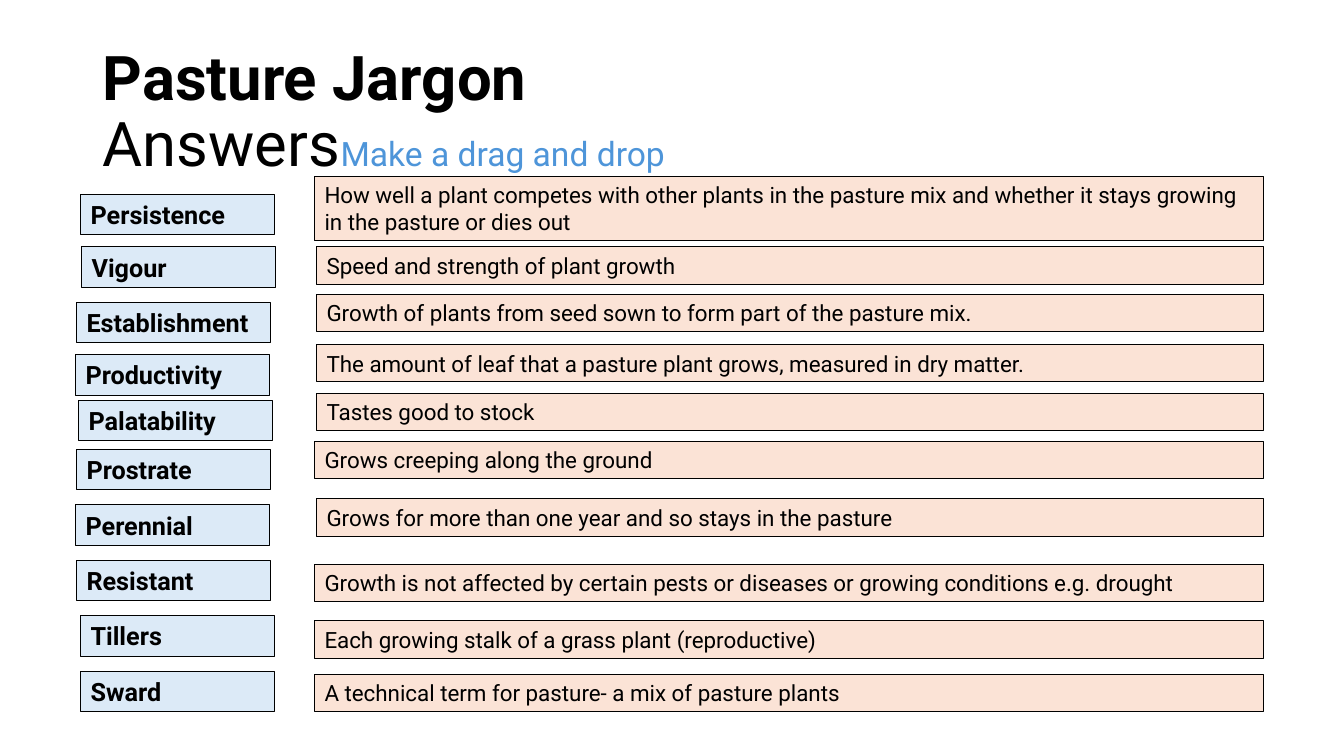
"""Build the pasture jargon answer slide, with terms beside their meanings."""
from pptx import Presentation, util as u
from pptx.dml import color
from pptx.enum import shapes, text

FONT = "Roboto"
BLACK, BLUE, PEACH = "000000", "DCEAF7", "FBE3D6"
RIGHT = 12.53

TITLE = [
    [("Pasture Jargon", 44, True, BLACK)],
    [("Answers", 44, False, BLACK), ("Make a drag and drop", 24, False, "4E95D9")],
]

TERMS = [
    ("Persistence", 0.8, 1.93),
    ("Vigour", 0.81, 2.45),
    ("Establishment", 0.76, 3),
    ("Productivity", 0.75, 3.52),
    ("Palatability", 0.78, 3.97),
    ("Prostrate", 0.76, 4.46),
    ("Perennial", 0.75, 5.01),
    ("Resistant", 0.76, 5.56),
    ("Tillers", 0.8, 6.11),
    ("Sward", 0.8, 6.66),
]

MEANINGS = [
    ("How well a plant competes with other plants in the pasture mix and whether "
     "it stays growing in the pasture or dies out", 3.12, 1.75, 0.64),
    ("Speed and strength of plant growth", 3.14, 2.45, 0.37),
    ("Growth of plants from seed sown to form part of the pasture mix.", 3.14, 2.92, 0.37),
    ("The amount of leaf that a pasture plant grows, measured in dry matter.",
     3.14, 3.42, 0.37),
    ("Tastes good to stock", 3.14, 3.9, 0.37),
    ("Grows creeping along the ground", 3.12, 4.38, 0.37),
    ("Grows for more than one year and so stays in the pasture", 3.14, 4.95, 0.37),
    ("Growth is not affected by certain pests or diseases or growing conditions "
     "e.g. drought", 3.12, 5.6, 0.37),
    ("Each growing stalk of a grass plant (reproductive)", 3.12, 6.16, 0.37),
    ("A technical term for pasture- a mix of pasture plants", 3.12, 6.69, 0.37),
]


def rgb(code):
    return color.RGBColor.from_string(code)


def add_run(para, words, size, bold, code):
    run = para.add_run()
    run.text = words
    run.font.name = FONT
    run.font.size = u.Pt(size)
    run.font.bold = bold
    run.font.color.rgb = rgb(code)


def add_title(slide):
    box = slide.shapes.add_textbox(*map(u.Inches, (0.92, 0.4, 11.5, 1.45)))
    frame = box.text_frame
    frame.word_wrap = True
    frame.vertical_anchor = text.MSO_ANCHOR.MIDDLE
    para = frame.paragraphs[0]
    para.line_spacing = 0.9
    for row, runs in enumerate(TITLE):
        if row:
            para.add_line_break()
        for run in runs:
            add_run(para, *run)


def add_card(slide, words, place, fill, size, bold):
    card = slide.shapes.add_shape(shapes.MSO_SHAPE.RECTANGLE, *map(u.Inches, place))
    card.shadow.inherit = False
    card.fill.solid()
    card.fill.fore_color.rgb = rgb(fill)
    card.line.color.rgb = rgb(BLACK)
    card.line.width = u.Pt(0.75)
    frame = card.text_frame
    frame.word_wrap = True
    frame.auto_size = text.MSO_AUTO_SIZE.SHAPE_TO_FIT_TEXT
    frame.vertical_anchor = text.MSO_ANCHOR.TOP
    para = frame.paragraphs[0]
    para.alignment = text.PP_ALIGN.LEFT
    add_run(para, words, size, bold, BLACK)


def main():
    deck = Presentation()
    deck.slide_width, deck.slide_height = u.Inches(13.33), u.Inches(7.5)
    slide = deck.slides.add_slide(deck.slide_layouts[6])
    add_title(slide)
    for words, left, top in TERMS:
        add_card(slide, words, (left, top, 1.92, 0.4), BLUE, 18, True)
    for words, left, top, high in MEANINGS:
        add_card(slide, words, (left, top, RIGHT - left, high), PEACH, 16, False)
    deck.save("out.pptx")


if __name__ == "__main__":
    main()
